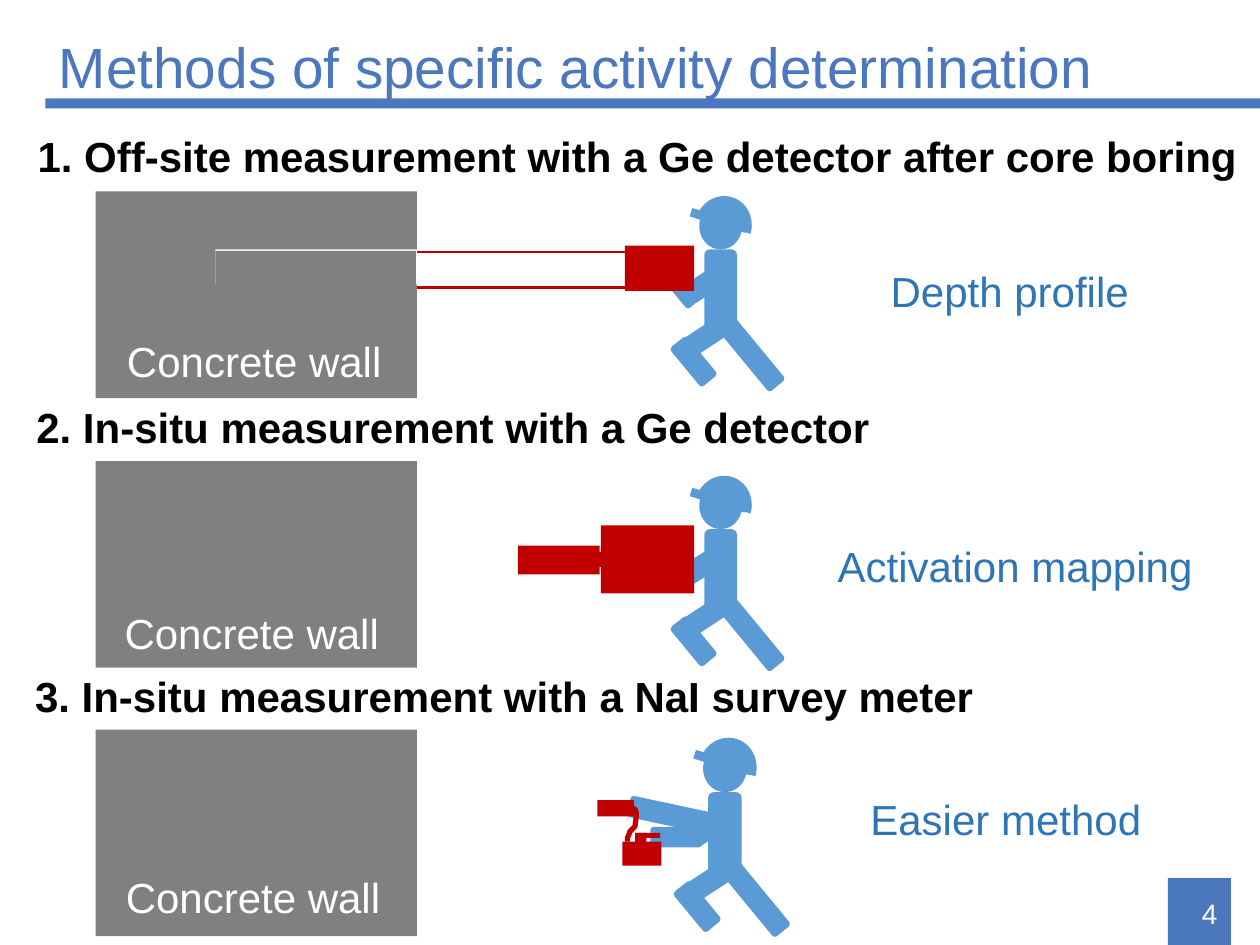
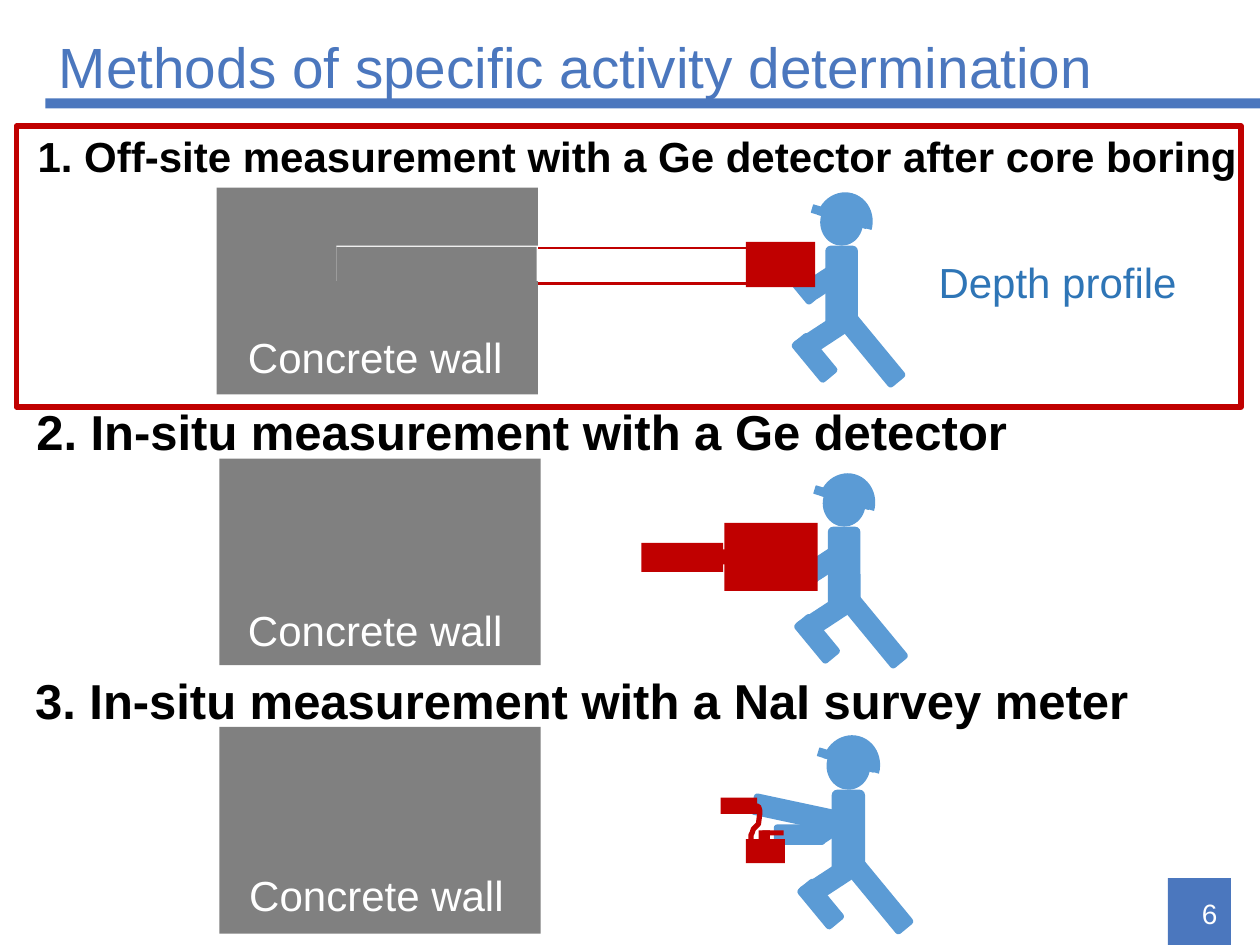
"""Build two slides on ways to determine specific activity."""
from lxml import etree
from pptx import Presentation
from pptx.dml.color import RGBColor
from pptx.enum.shapes import MSO_CONNECTOR, MSO_SHAPE
from pptx.enum.text import MSO_ANCHOR, MSO_AUTO_SIZE, PP_ALIGN
from pptx.oxml.ns import qn
from pptx.util import Cm, Pt

RECT, OVAL = MSO_SHAPE.RECTANGLE, MSO_SHAPE.OVAL
ROUND, CHORD = MSO_SHAPE.ROUNDED_RECTANGLE, MSO_SHAPE.CHORD
STRAIGHT = MSO_CONNECTOR.STRAIGHT
TOP, MIDDLE = MSO_ANCHOR.TOP, MSO_ANCHOR.MIDDLE
LEFT, RIGHT = PP_ALIGN.LEFT, PP_ALIGN.RIGHT
GROW, FIXED = MSO_AUTO_SIZE.SHAPE_TO_FIT_TEXT, MSO_AUTO_SIZE.NONE

THEME = RGBColor(0x4B, 0x77, 0xBE)
SKIN = RGBColor(0x5B, 0x9B, 0xD5)
NOTE = RGBColor(0x2E, 0x75, 0xB6)
RED = RGBColor(0xC0, 0x00, 0x00)
GREY = RGBColor(0x80, 0x80, 0x80)
BLACK = RGBColor(0, 0, 0)
WHITE = RGBColor(255, 255, 255)
FONT = "Arial"
INCH = 2.54

TITLE = "Methods of specific activity determination"
HEADS = [
    ("1. Off-site measurement with a Ge detector after core boring", 0.2, 0.99),
    ("2. In-situ measurement with a Ge detector", 0.19, 3.14),
    ("3. In-situ measurement with a NaI survey meter", 0.18, 5.27),
]
SLIDES = [
    {
        "page": "4",
        "heads": [(24, 9.81), (24, 6.88), (24, 7.72)],
        "walls": [(0.76, 1.52), (0.76, 3.66), (0.76, 5.79)],
        "notes": [("Depth profile", 6.97, 2.06, 2.11),
                  ("Activation mapping", 6.55, 4.24, 3.14),
                  ("Easier method", 6.81, 6.25, 2.37)],
        "frame": None,
    },
    {
        "page": "6",
        "heads": [(24, 9.81), (28, 8), (28, 8.98)],
        "walls": [(1.72, 1.49), (1.74, 3.64), (1.74, 5.77)],
        "notes": [("Depth profile", 7.35, 1.99, 2.11)],
        "frame": (0.13, 1, 9.72, 2.23),
    },
]

WALL = (2.55, 1.64)
BODY = [
    (OVAL, (0, 0, 0.34, 0.37), 0),
    (ROUND, (0.04, 0.37, 0.26, 0.66), 0),
    (ROUND, (-0.03, 0.47, 0.17, 0.34), 56.8),
    (ROUND, (-0.09, 0.89, 0.17, 0.42), 56.8),
    (ROUND, (0.32, 0.85, 0.17, 0.68), 320.5),
    (ROUND, (-0.13, 1.06, 0.17, 0.4), 320.5),
]
BRIM = (0.12, -0.09, 0.07, 0.46)
CAP = (-0.05, -0.04, 0.48, 0.45)
BENT = [((-0.24, 0.44, 0.17, 0.4), 320.5)]
REACH = [((-0.29, 0.52, 0.16, 0.4), 270), ((-0.32, 0.2, 0.17, 0.7), 282.1)]

SCENES = [
    {
        "label": (0.15, 1.09), "head": (4.79, 0.09), "scale": 1, "arms": BENT,
        "core": [((0.95, 0.46, 1.7, 0.28), WHITE), ((0.95, 0.47, 1.59, 0.29), GREY)],
        "gear": [(4.2, 0.43, 0.55, 0.36)],
        "rods": [(2.55, 0.76, 4.2, 0.76), (2.55, 0.48, 4.22, 0.48)],
        "cable": [],
    },
    {
        "label": (0.13, 1.11), "head": (4.79, 0.17), "scale": 1, "arms": BENT,
        "core": [],
        "gear": [(4.01, 0.51, 0.74, 0.54), (3.35, 0.67, 0.65, 0.23),
                 (3.57, 0.72, 0.65, 0.12)],
        "rods": [], "cable": [],
    },
    {
        "label": (0.14, 1.08), "head": (4.82, 0.12), "scale": 1.02, "arms": REACH,
        "core": [],
        "gear": [(4.18, 0.89, 0.31, 0.19), (4.31, 0.82, 0.17, 0.04),
                 (4.28, 0.82, 0.09, 0.14), (3.98, 0.56, 0.29, 0.13)],
        "rods": [],
        "cable": [(4.22, 0.89), (4.22, 0.86), (4.23, 0.84), (4.24, 0.81),
                  (4.25, 0.8), (4.28, 0.77), (4.29, 0.69), (4.29, 0.66),
                  (4.28, 0.63), (4.27, 0.63), (4.25, 0.62)],
    },
]


def size(*nums):
    return [Cm(num * INCH) for num in nums]


def move(box, spot, scale=1):
    x, y, *rest = [num * scale for num in box]
    return (spot[0] + x, spot[1] + y, *rest)


def add_box(shapes, box, fill, kind=RECT, turn=0, adj=()):
    shape = shapes.add_shape(kind, *size(*box))
    shape.shadow.inherit = False
    shape.fill.solid()
    shape.fill.fore_color.rgb = fill
    shape.line.fill.background()
    shape.rotation = turn
    for i, num in enumerate(adj):
        shape.adjustments[i] = num
    return shape


def add_text(slide, words, box, points, color, bold=False, wrap=False,
             anchor=TOP, align=LEFT, space=None):
    frame = slide.shapes.add_textbox(*size(*box)).text_frame
    frame.word_wrap = wrap
    frame.auto_size = FIXED if wrap else GROW
    frame.vertical_anchor = anchor
    para = frame.paragraphs[0]
    para.alignment = align
    para.line_spacing = space
    run = para.add_run()
    run.text = words
    font = run.font
    font.name, font.size, font.bold = FONT, Pt(points), bold
    font.color.rgb = color


def add_rod(shapes, ends):
    rod = shapes.add_connector(STRAIGHT, *size(*ends))
    rod.line.color.rgb = RED
    rod.line.width = Pt(1.5)
    etree.SubElement(rod._element.spPr, qn("a:effectLst"))


def add_cable(shapes, spots):
    first, *rest = [size(*spot) for spot in spots]
    pen = shapes.build_freeform(*first)
    pen.add_line_segments(rest, close=False)
    cable = pen.convert_to_shape()
    cable.shadow.inherit = False
    cable.fill.background()
    cable.line.color.rgb = RED
    cable.line.width = Pt(3)


def add_man(shapes, head, scale, arms):
    limbs = BODY + [(ROUND, box, turn) for box, turn in arms]
    for kind, box, turn in limbs:
        add_box(shapes, move(box, head, scale), SKIN, kind, turn)
    add_box(shapes, move(BRIM, head, scale), SKIN, ROUND, 286.5, [0.07])
    add_box(shapes, move(CAP, head, scale), SKIN, CHORD, 105.6, [54.1, 162])


def add_scene(slide, scene, wall):
    add_box(slide.shapes, (*wall, *WALL), GREY)
    for box, fill in scene["core"]:
        add_box(slide.shapes, move(box, wall), fill)
    label = (*move(scene["label"], wall), 2.24, 0.5)
    add_text(slide, "Concrete wall", label, 24, WHITE)
    shapes = slide.shapes.add_group_shape().shapes
    add_man(shapes, move(scene["head"], wall), scene["scale"], scene["arms"])
    for box in scene["gear"]:
        add_box(shapes, move(box, wall), RED)
    for x, y, right, low in scene["rods"]:
        add_rod(shapes, (*move((x, y), wall), *move((right, low), wall)))
    if scene["cable"]:
        add_cable(shapes, [move(spot, wall) for spot in scene["cable"]])


def add_base(deck, page):
    slide = deck.slides.add_slide(deck.slide_layouts[6])
    add_box(slide.shapes, (9.27, 6.97, 0.5, 0.53), THEME)
    add_box(slide.shapes, (0.36, 0.78, 9.64, 0.08), THEME)
    add_text(slide, TITLE, (0.37, 0.18, 9, 0.75), 32.4, THEME,
             wrap=True, anchor=MIDDLE, space=0.9)
    add_text(slide, page, (9.28, 7.05, 0.48, 0.4), 16, WHITE,
             wrap=True, anchor=MIDDLE, align=RIGHT)
    return slide


def add_frame(slide, box):
    frame = add_box(slide.shapes, box, WHITE)
    frame.fill.background()
    frame.line.color.rgb = RED
    frame.line.width = Pt(3)


def main():
    deck = Presentation()
    deck.slide_width, deck.slide_height = size(10, 7.5)
    for data in SLIDES:
        slide = add_base(deck, data["page"])
        if data["frame"]:
            add_frame(slide, data["frame"])
        for (words, x, y), (points, width) in zip(HEADS, data["heads"]):
            box = (x, y, width, 0.5 if points == 24 else 0.57)
            add_text(slide, words, box, points, BLACK, bold=True)
        for scene, wall in zip(SCENES, data["walls"]):
            add_scene(slide, scene, wall)
        for words, x, y, width in data["notes"]:
            add_text(slide, words, (x, y, width, 0.5), 24, NOTE)
    deck.save("out.pptx")


if __name__ == "__main__":
    main()
